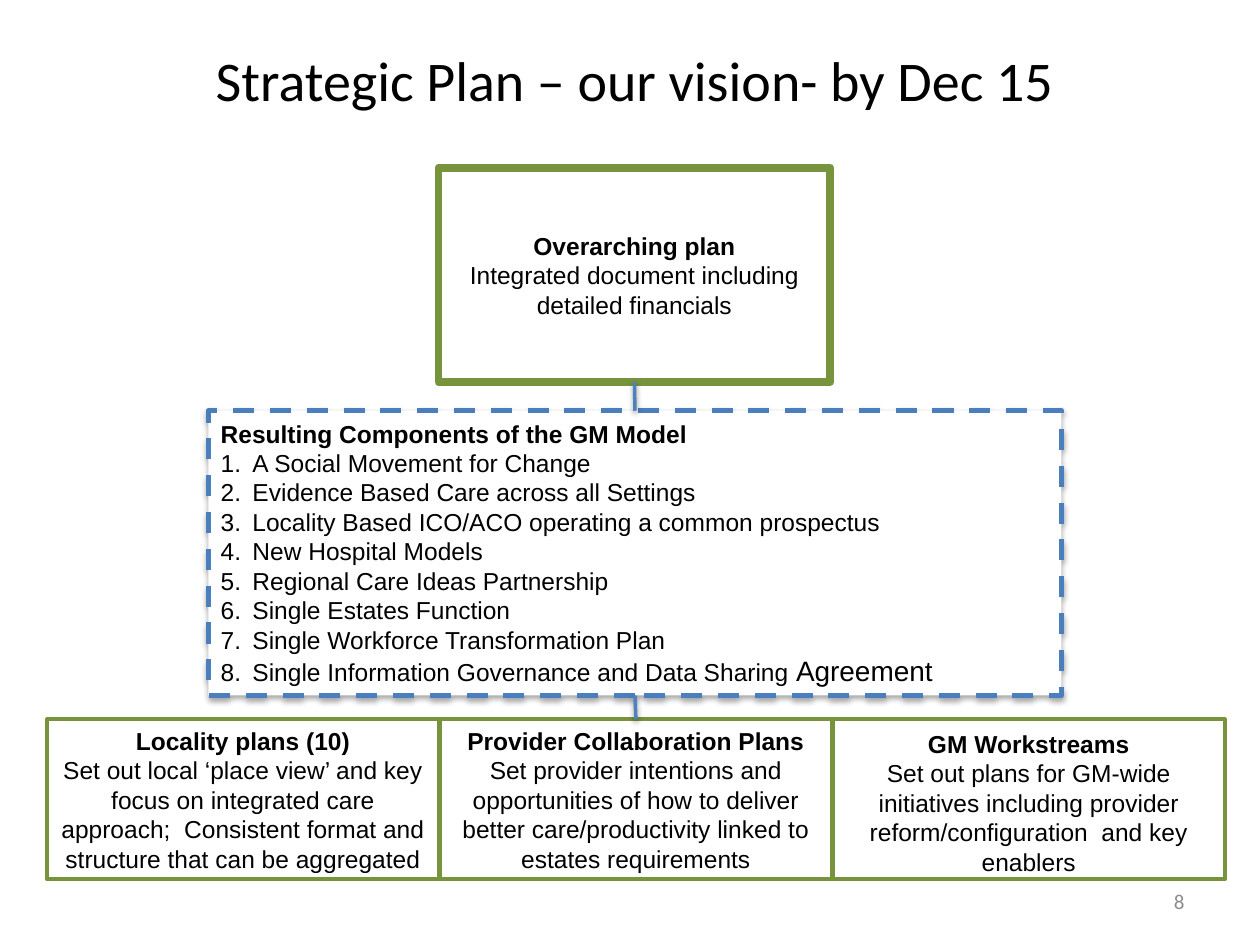
from dataclasses import dataclass

from lxml.etree import SubElement
from pptx import Presentation
from pptx.dml.color import RGBColor
from pptx.enum.dml import MSO_LINE_DASH_STYLE as Dash
from pptx.enum.shapes import MSO_CONNECTOR as Connector
from pptx.enum.shapes import MSO_SHAPE as Preset
from pptx.enum.text import MSO_ANCHOR as Anchor
from pptx.enum.text import PP_ALIGN as Align
from pptx.oxml.ns import qn
from pptx.util import Cm, Pt


@dataclass(frozen=True)
class Theme:
    body_font: str = "Arial"
    title_font: str = "Calibri"
    title_size: float = 32
    body_size: float = 14
    large_size: float = 16
    number_size: float = 12
    black: str = "000000"
    white: str = "FFFFFF"
    grey: str = "8C8C8C"
    green: str = "77933C"
    dash_blue: str = "4B7EBC"
    link_blue: str = "4F81BD"


@dataclass(frozen=True)
class Area:
    left: float
    top: float
    width: float
    height: float

    def lengths(self) -> tuple:
        return Cm(self.left), Cm(self.top), Cm(self.width), Cm(self.height)


@dataclass(frozen=True)
class Plan:
    heading: str
    detail: str
    area: Area
    border: float = 2.25
    inset_top: float = 0.13


THEME = Theme()
ROW_LEFT, ROW_TOP, ROW_PITCH = 0.95, 14.5, 7.92
PLAN_WIDTH, PLAN_HEIGHT = 7.9, 3.23


def row_area(column: int) -> Area:
    return Area(ROW_LEFT + column * ROW_PITCH, ROW_TOP, PLAN_WIDTH, PLAN_HEIGHT)


OVERARCHING = Plan(
    "Overarching plan",
    "Integrated document including detailed financials",
    Area(8.84, 3.38, PLAN_WIDTH, 4.32),
    border=4.5,
)
SUPPORTING = [
    Plan(
        "Locality plans (10)",
        "Set out local ‘place view’ and key focus on integrated care approach;  "
        "Consistent format and structure that can be aggregated",
        row_area(0),
    ),
    Plan(
        "Provider Collaboration Plans",
        "Set provider intentions and opportunities of how to deliver "
        "better care/productivity linked to estates requirements",
        row_area(1),
    ),
    Plan(
        "GM Workstreams",
        "Set out plans for GM-wide initiatives including provider "
        "reform/configuration  and key enablers",
        row_area(2),
        inset_top=0.25,
    ),
]
COMPONENTS_AREA = Area(4.2, 8.28, 17.2, 5.74)
COMPONENTS_HEADING = "Resulting Components of the GM Model"
COMPONENTS = [
    "A Social Movement for Change",
    "Evidence Based Care across all Settings",
    "Locality Based ICO/ACO operating a common prospectus",
    "New Hospital Models",
    "Regional Care Ideas Partnership",
    "Single Estates Function",
    "Single Workforce Transformation Plan",
    "Single Information Governance and Data Sharing ",
]
LARGE_ENDING = "Agreement"


def color(code: str) -> RGBColor:
    return RGBColor.from_string(code)


def style_run(run, size=THEME.body_size, bold=False,
              font=THEME.body_font, ink=THEME.black) -> None:
    run.font.name = font
    run.font.size = Pt(size)
    run.font.bold = bold
    run.font.color.rgb = color(ink)


def add_label(slide, wording: str, area: Area, size: float, ink: str, align) -> None:
    label = slide.shapes.add_textbox(*area.lengths())
    frame = label.text_frame
    frame.word_wrap = True
    frame.vertical_anchor = Anchor.MIDDLE
    frame.text = wording
    paragraph = frame.paragraphs[0]
    paragraph.alignment = align
    style_run(paragraph.runs[0], size, font=THEME.title_font, ink=ink)


def add_box(slide, area: Area, border: str, width: float, lines: list[str], align):
    box = slide.shapes.add_shape(Preset.RECTANGLE, *area.lengths())
    box.shadow.inherit = False
    box.fill.solid()
    box.fill.fore_color.rgb = color(THEME.white)
    box.line.color.rgb = color(border)
    box.line.width = Pt(width)
    frame = box.text_frame
    frame.word_wrap = True
    frame.vertical_anchor = Anchor.MIDDLE
    frame.text = "\n".join(lines)
    for index, paragraph in enumerate(frame.paragraphs):
        paragraph.alignment = align
        style_run(paragraph.runs[0], bold=index == 0)
    return box


def add_plan(slide, plan: Plan):
    box = add_box(slide, plan.area, THEME.green, plan.border,
                  [plan.heading, plan.detail], Align.CENTER)
    box.text_frame.margin_top = Cm(plan.inset_top)
    return box


def cast_shadow(item, opacity: int, distance: float) -> None:
    properties = item.element.spPr
    effects = properties.find(qn("a:effectLst"))
    if effects is None:
        effects = SubElement(properties, qn("a:effectLst"))
    shadow = SubElement(effects, qn("a:outerShdw"), blurRad=str(Pt(3.1)),
                        dist=str(Pt(distance)), dir="5400000", rotWithShape="0")
    ink = SubElement(shadow, qn("a:srgbClr"), val=THEME.black)
    SubElement(ink, qn("a:alpha"), val=str(opacity * 1000))


def number_paragraph(paragraph) -> None:
    properties = paragraph._p.get_or_add_pPr()
    properties.set("marL", str(Cm(0.64)))
    properties.set("indent", str(-Cm(0.64)))
    SubElement(properties, qn("a:buFont"), typeface=THEME.body_font)
    SubElement(properties, qn("a:buAutoNum"), type="arabicPeriod")


def add_components(slide):
    box = add_box(slide, COMPONENTS_AREA, THEME.dash_blue, 3,
                  [COMPONENTS_HEADING, *COMPONENTS], Align.LEFT)
    box.line.dash_style = Dash.DASH
    cast_shadow(box, 35, 1.8)
    entries = box.text_frame.paragraphs[1:]
    for entry in entries:
        number_paragraph(entry)
    ending = entries[-1].add_run()
    ending.text = LARGE_ENDING
    style_run(ending, THEME.large_size)
    return box


def link_up(slide, lower, upper) -> None:
    link = slide.shapes.add_connector(Connector.STRAIGHT, 0, 0, 0, 0)
    link.begin_connect(lower, 0)
    link.end_connect(upper, 2)
    link.line.color.rgb = color(THEME.link_blue)
    link.line.width = Pt(2)
    cast_shadow(link, 38, 1.6)


def main() -> None:
    deck = Presentation()
    deck.slide_width, deck.slide_height = Cm(25.4), Cm(19.05)
    slide = deck.slides.add_slide(deck.slide_layouts[6])
    add_label(slide, "Strategic Plan – our vision- by Dec 15",
              Area(-1.07, -0.2, 27.74, 3.6), THEME.title_size, THEME.black, Align.CENTER)
    add_label(slide, "8", Area(18.21, 17.65, 5.92, 1.02),
              THEME.number_size, THEME.grey, Align.RIGHT)
    overarching = add_plan(slide, OVERARCHING)
    supporting = [add_plan(slide, plan) for plan in SUPPORTING]
    components = add_components(slide)
    link_up(slide, supporting[1], components)
    link_up(slide, components, overarching)
    deck.save("out.pptx")


if __name__ == "__main__":
    main()
